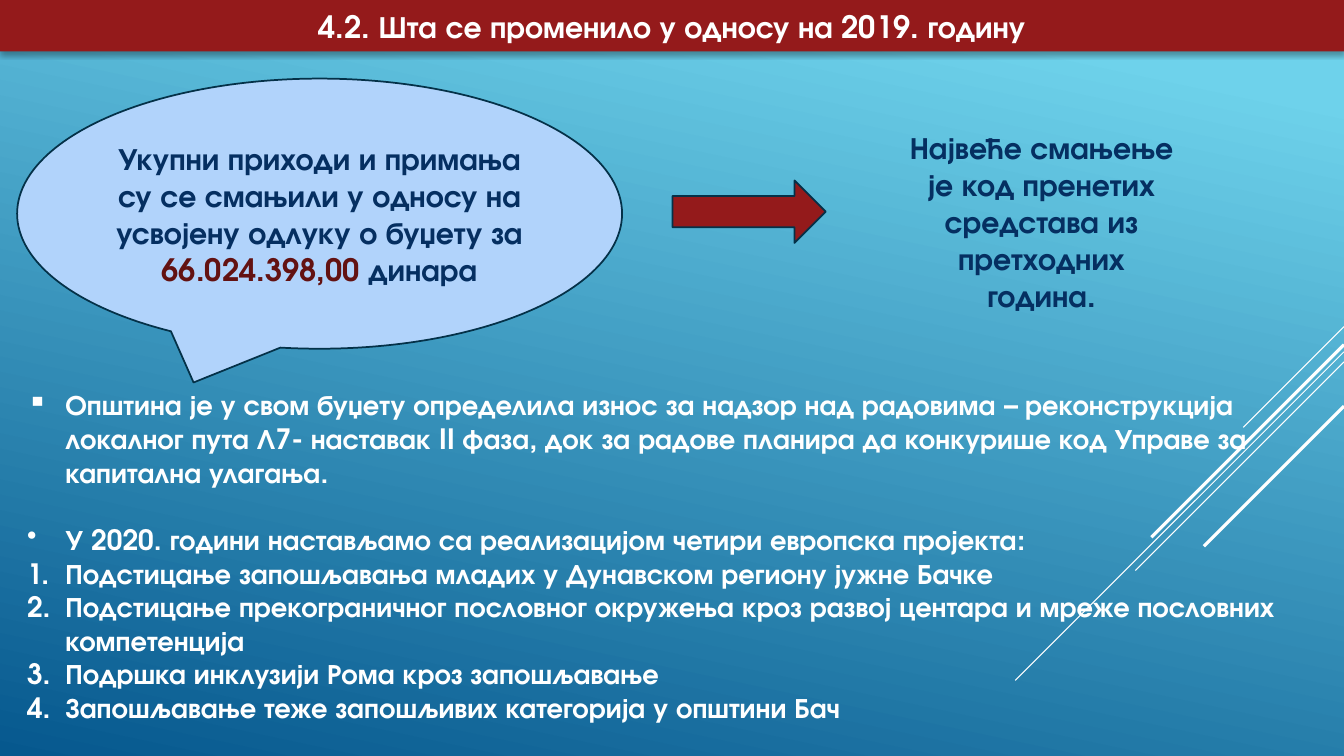
from dataclasses import dataclass
from typing import Any

import lxml.etree
import pptx
import pptx.dml.color
import pptx.enum.dml
import pptx.enum.shapes
import pptx.enum.text
import pptx.oxml
import pptx.oxml.ns
import pptx.util

Inches = pptx.util.Inches
Pt = pptx.util.Pt
Kind = pptx.enum.shapes.MSO_SHAPE
Align = pptx.enum.text.PP_ALIGN
Anchor = pptx.enum.text.MSO_ANCHOR
Fit = pptx.enum.text.MSO_AUTO_SIZE
qn = pptx.oxml.ns.qn


@dataclass(frozen=True)
class Theme:
    font: str = "TeX Gyre Adventor"
    head: int = 22
    body: int = 20
    edge: float = 1.25
    white: str = "FFFFFF"
    red: str = "941A1B"
    wine: str = "631212"
    navy: str = "052F61"
    ink: str = "043148"
    pale: str = "B1D3FB"
    sky: str = "6ED2EB"
    deep: str = "06588E"


@dataclass(frozen=True)
class Box:
    left: float
    top: float
    width: float
    height: float

    def emu(self) -> tuple[int, ...]:
        return tuple(Inches(v) for v in (self.left, self.top, self.width, self.height))


@dataclass(frozen=True)
class Ray:
    """A diagonal line that starts at the right edge and falls to the left."""
    top: float
    run: float
    width: float


@dataclass(frozen=True)
class Item:
    text: str
    mark: str = ""  # empty means a number
    gap: int = 0


THEME = Theme()
WIDTH, HEIGHT = 13.33, 7.5
INDENT = 0.38

RAYS = [
    Ray(3.24, 1.00, 0.75),
    Ray(3.49, 3.26, 0.75),
    Ray(3.59, 2.07, 0.75),
    Ray(3.42, 1.91, 2.25),
    Ray(4.03, 1.39, 2.25),
]

TITLE = "4.2. Шта се променило у односу на 2019. годину"
CLAIM = [
    ("Укупни приходи и примања су се смањили у односу на усвојену одлуку о буџету за ", THEME.navy),
    ("66.024.398,00", THEME.wine),
    (" динара", THEME.navy),
]
CAUSE = [("Највеће смањење је код пренетих средстава из претходних година.", THEME.navy)]
ITEMS = [
    Item("Општина је у свом буџету определила износ за надзор над радовима – реконструкција "
         "локалног пута Л7- наставак II фаза, док за радове планира да конкурише код Управе за "
         "капитална улагања.", "▪"),
    Item("У 2020. години настављамо са реализацијом четири европска пројекта:", "•", 24),
    Item("Подстицање запошљавања младих у Дунавском региону јужне Бачке"),
    Item("Подстицање прекограничног пословног окружења кроз развој центара и мреже пословних "
         "компетенција"),
    Item("Подршка инклузији Рома кроз запошљавање"),
    Item("Запошљавање теже запошљивих категорија у општини Бач"),
]


def rgb(code: str) -> pptx.dml.color.RGBColor:
    return pptx.dml.color.RGBColor.from_string(code)


def style(para: Any, size: int) -> None:
    para.font.name = THEME.font
    para.font.size = Pt(size)
    para.font.bold = True


def write(shape: Any, runs: list[tuple[str, str]]) -> None:
    """Put one centred paragraph of coloured runs in the middle of a shape."""
    frame = shape.text_frame
    frame.word_wrap = True
    frame.auto_size = Fit.NONE
    frame.vertical_anchor = Anchor.MIDDLE
    para = frame.paragraphs[0]
    para.alignment = Align.CENTER
    style(para, THEME.head)
    for text, color in runs:
        run = para.add_run()
        run.text = text
        run.font.color.rgb = rgb(color)


def paint(slide: Any) -> None:
    """Fill the background with the gradient."""
    fill = slide.background.fill
    fill.gradient()
    fill.gradient_angle = 258
    for stop, (place, color) in zip(fill.gradient_stops, [(0.1, THEME.sky), (1, THEME.deep)]):
        stop.position = place
        stop.color.rgb = rgb(color)


def add_rays(slide: Any) -> None:
    group = slide.shapes.add_group_shape()
    for ray in RAYS:
        line = group.shapes.add_connector(
            pptx.enum.shapes.MSO_CONNECTOR.STRAIGHT, Inches(WIDTH), Inches(ray.top),
            Inches(WIDTH - ray.run), Inches(ray.top + ray.run))
        line.line.color.rgb = rgb(THEME.white)
        line.line.width = Pt(ray.width)
        lxml.etree.SubElement(line._element.spPr, qn("a:effectLst"))


def add_title(slide: Any) -> None:
    """Shape the title as a rounded red bar with a soft shadow."""
    title = slide.shapes.title
    title.left, title.top, title.width, title.height = Box(0, 0, WIDTH, 0.51).emu()
    props = title._element.spPr
    space = pptx.oxml.ns.nsdecls("a")
    props.append(pptx.oxml.parse_xml(f'<a:prstGeom {space} prst="roundRect"><a:avLst/></a:prstGeom>'))
    title.fill.solid()
    title.fill.fore_color.rgb = rgb(THEME.red)
    props.append(pptx.oxml.parse_xml(
        f'<a:effectLst {space}><a:outerShdw blurRad="{Pt(3.5)}" dist="{Pt(2.2)}" dir="5400000" '
        'rotWithShape="0"><a:srgbClr val="000000"><a:alpha val="32000"/></a:srgbClr>'
        '</a:outerShdw></a:effectLst>'))
    write(title, [(TITLE, THEME.white)])


def add_form(slide: Any, kind: Any, box: Box, fill: str = "") -> Any:
    """Add an outlined shape, or a bare one when no fill is given."""
    shape = slide.shapes.add_shape(kind, *box.emu())
    shape.shadow.inherit = False
    if fill:
        shape.fill.solid()
        shape.fill.fore_color.rgb = rgb(fill)
        shape.line.color.rgb = rgb(THEME.ink)
        shape.line.width = Pt(THEME.edge)
    else:
        shape.fill.background()
        shape.line.fill.background()
    return shape


def add_list(slide: Any, box: Box) -> None:
    frame = slide.shapes.add_textbox(*box.emu()).text_frame
    frame.word_wrap = True
    frame.auto_size = Fit.SHAPE_TO_FIT_TEXT
    for index, item in enumerate(ITEMS):
        para = frame.add_paragraph() if index else frame.paragraphs[0]
        para.text = item.text
        para.space_before = Pt(item.gap)
        style(para, THEME.body)
        para.font.color.rgb = rgb(THEME.white)
        props = para._p.get_or_add_pPr()
        props.set("marL", str(Inches(INDENT)))
        props.set("indent", str(-Inches(INDENT)))
        tag, key, value = ("buChar", "char", item.mark) if item.mark else (
            "buAutoNum", "type", "arabicPeriod")
        bullet = lxml.etree.Element(qn(f"a:{tag}"), {key: value})
        props.find(qn("a:defRPr")).addprevious(bullet)


def main() -> None:
    deck = pptx.Presentation()
    deck.slide_width, deck.slide_height = Inches(WIDTH), Inches(HEIGHT)
    slide = deck.slides.add_slide(deck.slide_layouts[5])
    paint(slide)
    add_rays(slide)
    add_title(slide)
    write(add_form(slide, Kind.OVAL_CALLOUT, Box(0.17, 0.78, 6, 2.68), THEME.pale), CLAIM)
    add_form(slide, Kind.RIGHT_ARROW, Box(6.67, 1.79, 1.52, 0.62), THEME.red)
    write(add_form(slide, Kind.TEAR, Box(8.31, 0.59, 4.04, 3.21)), CAUSE)
    add_list(slide, Box(0.17, 3.8, 13, 3.8))
    deck.save("out.pptx")


if __name__ == "__main__":
    main()
